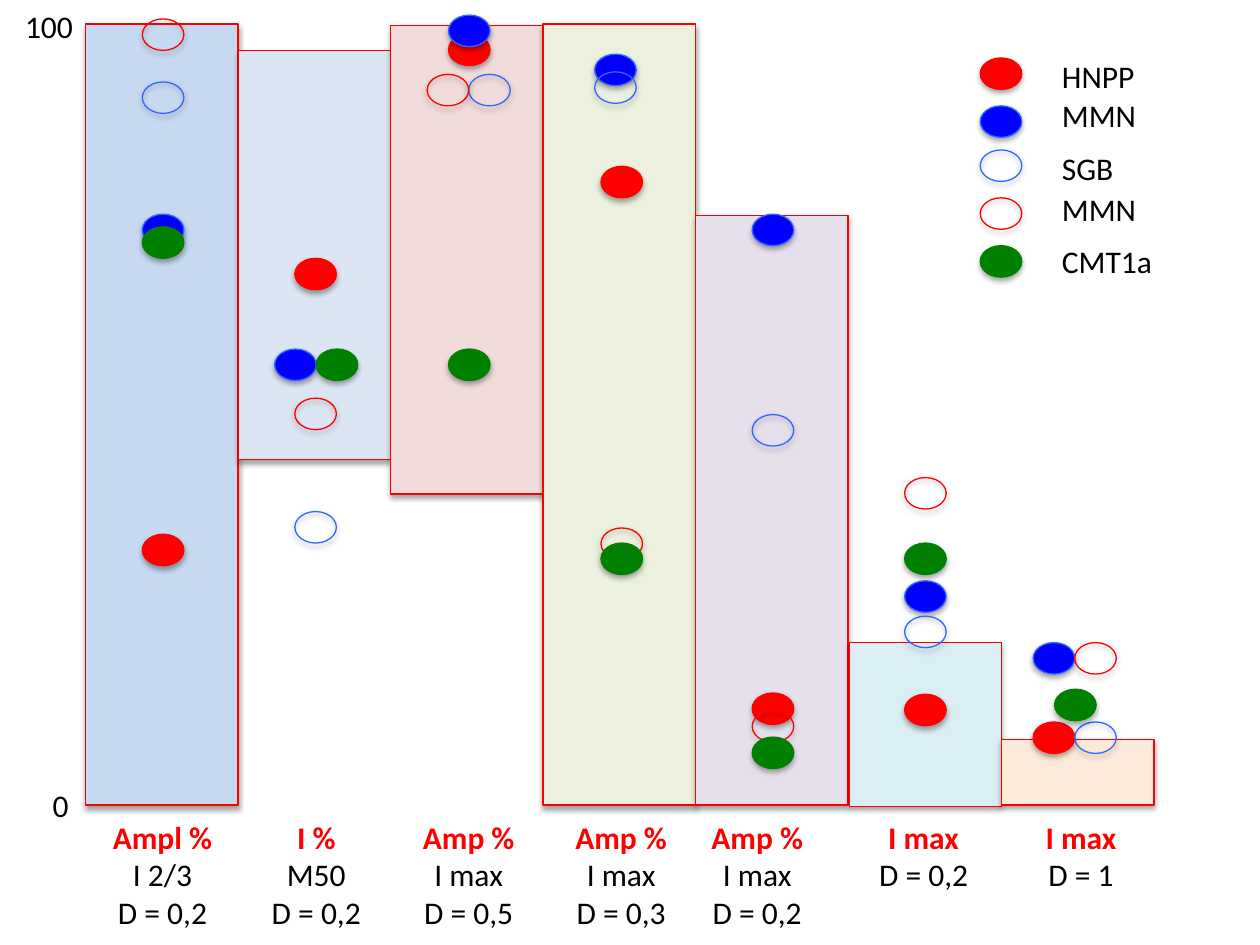
import pptx
import pptx.util
import pptx.dml.color
import pptx.enum.shapes
import pptx.enum.text
import lxml.etree
from pptx.util import Inches

COLORS = {
    "red": "FF0000", "blue": "0000FF", "outline blue": "3366FF",
    "green": "008000", "black": "000000",
}
BAR_FILLS = ["C6D9F1", "DCE6F2", "F2DCDB", "EBF1DE", "E6E0EC", "DBEEF4", "FDEADA"]
SHADOW = (
    '<a:effectLst xmlns:a="http://schemas.openxmlformats.org/drawingml/2006/main">'
    '<a:outerShdw blurRad="40000" dist="23000" dir="5400000" rotWithShape="0">'
    '<a:srgbClr val="000000"><a:alpha val="35000"/></a:srgbClr>'
    '</a:outerShdw></a:effectLst>'
)
SHAPES = pptx.enum.shapes.MSO_SHAPE
ALIGN = pptx.enum.text.PP_ALIGN

deck = pptx.Presentation()
deck.slide_width = Inches(10)
deck.slide_height = Inches(7.5)
page = deck.slides.add_slide(deck.slide_layouts[6])


def add_mark(kind, left, top, width, height, fill, line):
    mark = page.shapes.add_shape(
        kind, Inches(left), Inches(top), Inches(width), Inches(height))
    if fill:
        mark.fill.solid()
        mark.fill.fore_color.rgb = pptx.dml.color.RGBColor.from_string(fill)
    else:
        mark.fill.background()
    mark.line.color.rgb = pptx.dml.color.RGBColor.from_string(line)
    mark.line.width = pptx.util.Pt(0.75)
    mark._element.spPr.append(lxml.etree.fromstring(SHADOW))


def add_label(left, top, width, height, lines, heading=False, align=ALIGN.LEFT):
    box = page.shapes.add_textbox(
        Inches(left), Inches(top), Inches(width), Inches(height))
    frame = box.text_frame
    frame.word_wrap = False
    frame.auto_size = pptx.enum.text.MSO_AUTO_SIZE.SHAPE_TO_FIT_TEXT
    for index, line in enumerate(lines):
        para = frame.paragraphs[0] if index == 0 else frame.add_paragraph()
        para.text = line
        para.alignment = align
        is_heading = heading and index == 0
        color = COLORS["red" if is_heading else "black"]
        para.font.name = "Calibri"
        para.font.size = pptx.util.Pt(18)
        para.font.bold = is_heading
        para.font.color.rgb = pptx.dml.color.RGBColor.from_string(color)


COLUMN_WIDTH = 1.21
bar_lefts = [0.68, 1.89, 3.1, 4.31, 5.52, 6.74, 7.95]
bar_spans = [(0.19, 6.2), (0.4, 3.25), (0.2, 3.72), (0.19, 6.2),
             (1.71, 4.68), (5.1, 1.3), (5.87, 0.52)]
for left, (top, height), fill in zip(bar_lefts, bar_spans, BAR_FILLS):
    add_mark(SHAPES.RECTANGLE, left, top, COLUMN_WIDTH, height, fill, COLORS["red"])

DOT_WIDTH, DOT_HEIGHT = 0.33, 0.25
dot_lefts = [1.13, 2.34, 3.56, 4.77, 5.97, 7.18, 8.37]
series = [
    ("HNPP", COLORS["red"], COLORS["red"],
     [4.24, 2.05, 0.27, 1.32, 5.5, 5.51, 5.73], {6: -0.17}, 0.46, 0.4, 0.81),
    ("MMN", COLORS["blue"], COLORS["outline blue"],
     [1.7, 2.77, 0.12, 0.43, 1.7, 4.61, 5.1],
     {1: -0.16, 3: -0.05, 6: -0.17}, 0.84, 0.71, 0.83),
    ("SGB", None, COLORS["outline blue"],
     [0.65, 4.06, 0.59, 0.57, 3.29, 4.89, 5.73],
     {2: 0.16, 3: -0.05, 6: 0.16}, 1.19, 1.13, 0.65),
    ("MMN", None, COLORS["red"],
     [0.15, 3.16, 0.59, 4.19, 5.64, 3.79, 5.1],
     {2: -0.17, 6: 0.16}, 1.57, 1.46, 0.83),
    ("CMT1a", COLORS["green"], COLORS["green"],
     [1.8, 2.77, 2.77, 4.31, 5.85, 4.31, 5.47], {1: 0.17}, 1.95, 1.87, 1.0),
]
for name, fill, line, tops, shifts, key_top, name_top, name_width in series:
    for column, (left, top) in enumerate(zip(dot_lefts, tops)):
        add_mark(SHAPES.OVAL, left + shifts.get(column, 0), top,
                 DOT_WIDTH, DOT_HEIGHT, fill, line)
    add_mark(SHAPES.OVAL, 7.78, key_top, DOT_WIDTH, DOT_HEIGHT, fill, line)
    add_label(8.33, name_top, name_width, 0.4, [name])

column_labels = [
    (0.79, 1.0, ["Ampl %", "I 2/3\vD = 0,2"]),
    (2.05, 0.92, ["I %", "M50", "D = 0,2"]),
    (3.25, 0.94, ["Amp %", "I max", "D = 0,5"]),
    (4.46, 0.94, ["Amp %", "I max", "D = 0,3"]),
    (5.54, 0.94, ["Amp %", "I max", "D = 0,2"]),
    (6.87, 0.92, ["I max", "D = 0,2"]),
    (8.19, 0.78, ["I max", "D = 1"]),
]
for left, width, lines in column_labels:
    height = 0.71 if left > 6 else 1.01
    add_label(left, 6.44, width, height, lines, heading=True, align=ALIGN.CENTER)

add_label(0.32, 6.19, 0.33, 0.4, ["0"])
add_label(0.1, 0.01, 0.59, 0.4, ["100"])

deck.save("out.pptx")
